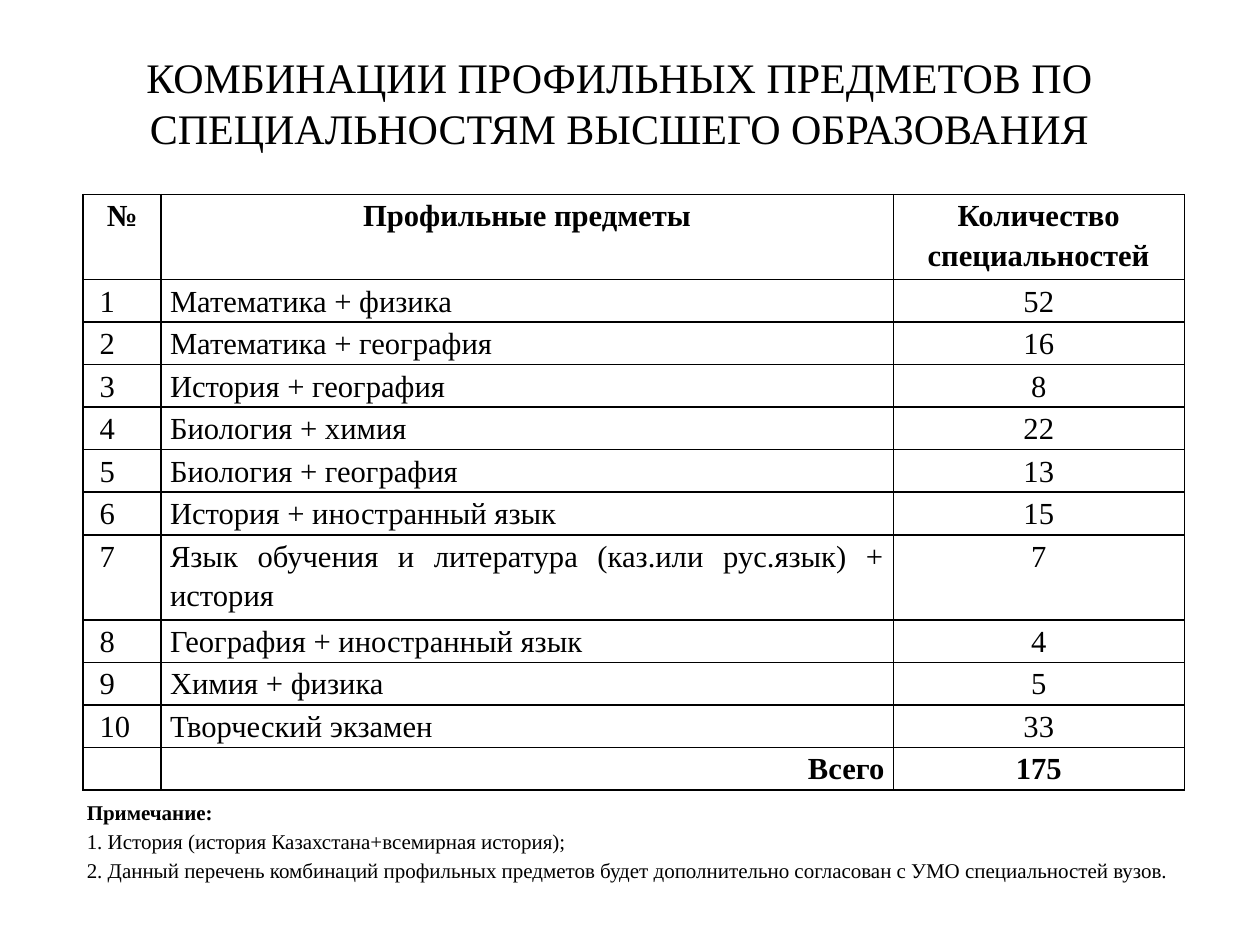
from typing import NamedTuple

import pptx
import pptx.dml.color
import pptx.enum.text
import pptx.oxml
import pptx.oxml.ns
import pptx.util

Inches = pptx.util.Inches
Pt = pptx.util.Pt
ALIGN = pptx.enum.text.PP_ALIGN
SLIDE_W, SLIDE_H = 10, 7.5
FONT = "Times New Roman"
BLACK = "000000"
TABLE_SHARE = 0.63
DOUBLE_ROWS = (0, 7)
ROW_H = TABLE_SHARE * SLIDE_H / 14  # ten single rows and two double ones
COLUMN_SHARES = (0.062, 0.581, 0.231)
SPACING = 1.15


class Box(NamedTuple):
    """Place as shares of the slide's width and height."""
    left: float
    top: float
    width: float
    height: float

    def emu(self) -> tuple:
        return (Inches(self.left * SLIDE_W), Inches(self.top * SLIDE_H),
                Inches(self.width * SLIDE_W), Inches(self.height * SLIDE_H))


class Line(NamedTuple):
    text: str
    size: float
    align: ALIGN
    bold: bool = False
    spacing: float = SPACING


class Combination(NamedTuple):
    subjects: str
    count: int


TITLE_BOX = Box(0.035, 0.048, 0.913, 0.121)
TABLE_BOX = Box(0.066, 0.206, 0.874, TABLE_SHARE)
NOTE_BOX = Box(0.059, TABLE_BOX.top + TABLE_SHARE, 0.888, 0.107)

TITLE = "КОМБИНАЦИИ ПРОФИЛЬНЫХ ПРЕДМЕТОВ ПО СПЕЦИАЛЬНОСТЯМ ВЫСШЕГО ОБРАЗОВАНИЯ"
HEADER = ("№", "Профильные предметы", "Количество специальностей")
COMBINATIONS = [
    Combination("Математика + физика", 52),
    Combination("Математика + география", 16),
    Combination("История + география", 8),
    Combination("Биология + химия", 22),
    Combination("Биология + география", 13),
    Combination("История + иностранный язык", 15),
    Combination("Язык обучения и литература (каз.или рус.язык) + история", 7),
    Combination("География + иностранный язык", 4),
    Combination("Химия + физика", 5),
    Combination("Творческий экзамен", 33),
]
NOTES = [
    Line("Примечание:", 12, ALIGN.JUSTIFY, True),
    Line("1. История (история Казахстана+всемирная история);", 12, ALIGN.JUSTIFY),
    Line("2. Данный перечень комбинаций профильных предметов будет дополнительно "
         "согласован с УМО специальностей вузов.", 12, ALIGN.JUSTIFY),
]


def color(value: str) -> pptx.dml.color.RGBColor:
    return pptx.dml.color.RGBColor.from_string(value)


def write(tf, lines: list[Line]) -> None:
    for i, line in enumerate(lines):
        p = tf.add_paragraph() if i else tf.paragraphs[0]
        p.alignment = line.align
        p.line_spacing = line.spacing
        r = p.add_run()
        r.text = line.text
        r.font.name = FONT
        r.font.size = Pt(line.size)
        r.font.bold = line.bold
        r.font.color.rgb = color(BLACK)


def add_borders(cell, width: float = 1) -> None:
    tc_pr = cell._tc.get_or_add_tcPr()
    for i, side in enumerate(("lnL", "lnR", "lnT", "lnB")):
        tc_pr.insert(i, pptx.oxml.parse_xml(
            f'<a:{side} {pptx.oxml.ns.nsdecls("a")} w="{Pt(width)}"><a:solidFill>'
            f'<a:srgbClr val="{BLACK}"/></a:solidFill></a:{side}>'))


def fill_cell(cell, text: str, align: ALIGN, bold: bool, left: float) -> None:
    cell.margin_left, cell.margin_right = Inches(left), Inches(0.07)
    cell.margin_top = cell.margin_bottom = 0
    cell.fill.background()
    add_borders(cell)
    if text:
        write(cell.text_frame, [Line(text, 17.5, align, bold)])


def add_combinations(s) -> None:
    total = sum(c.count for c in COMBINATIONS)
    rows = [HEADER]
    rows += [(str(n), c.subjects, str(c.count)) for n, c in enumerate(COMBINATIONS, 1)]
    rows.append(("", "Всего", str(total)))
    last = len(rows) - 1
    table = s.shapes.add_table(len(rows), len(HEADER), *TABLE_BOX.emu()).table
    table.first_row = table.horz_banding = False
    for column, share in zip(table.columns, COLUMN_SHARES):
        column.width = Inches(share * SLIDE_W)
    for i, row in enumerate(rows):
        table.rows[i].height = Inches(ROW_H * (2 if i in DOUBLE_ROWS else 1))
        for j, text in enumerate(row):
            if i == 0 or j == 2:
                align = ALIGN.CENTER
            else:
                align = ALIGN.RIGHT if i == last else ALIGN.JUSTIFY
            left = 0.13 if j == 0 and 0 < i < last else 0.07
            fill_cell(table.cell(i, j), text, align, i in (0, last), left)


def main() -> None:
    prs = pptx.Presentation()
    prs.slide_width, prs.slide_height = Inches(SLIDE_W), Inches(SLIDE_H)
    s = prs.slides.add_slide(prs.slide_layouts[5])

    title = s.shapes.title
    title.left, title.top, title.width, title.height = TITLE_BOX.emu()
    title.text_frame.vertical_anchor = pptx.enum.text.MSO_ANCHOR.TOP
    title.text_frame.auto_size = pptx.enum.text.MSO_AUTO_SIZE.SHAPE_TO_FIT_TEXT
    write(title.text_frame, [Line(TITLE, 24, ALIGN.CENTER, spacing=1.0)])

    add_combinations(s)

    note = s.shapes.add_textbox(*NOTE_BOX.emu())
    note.text_frame.word_wrap = True
    note.text_frame.auto_size = pptx.enum.text.MSO_AUTO_SIZE.SHAPE_TO_FIT_TEXT
    write(note.text_frame, NOTES)

    prs.save("out.pptx")


if __name__ == "__main__":
    main()
